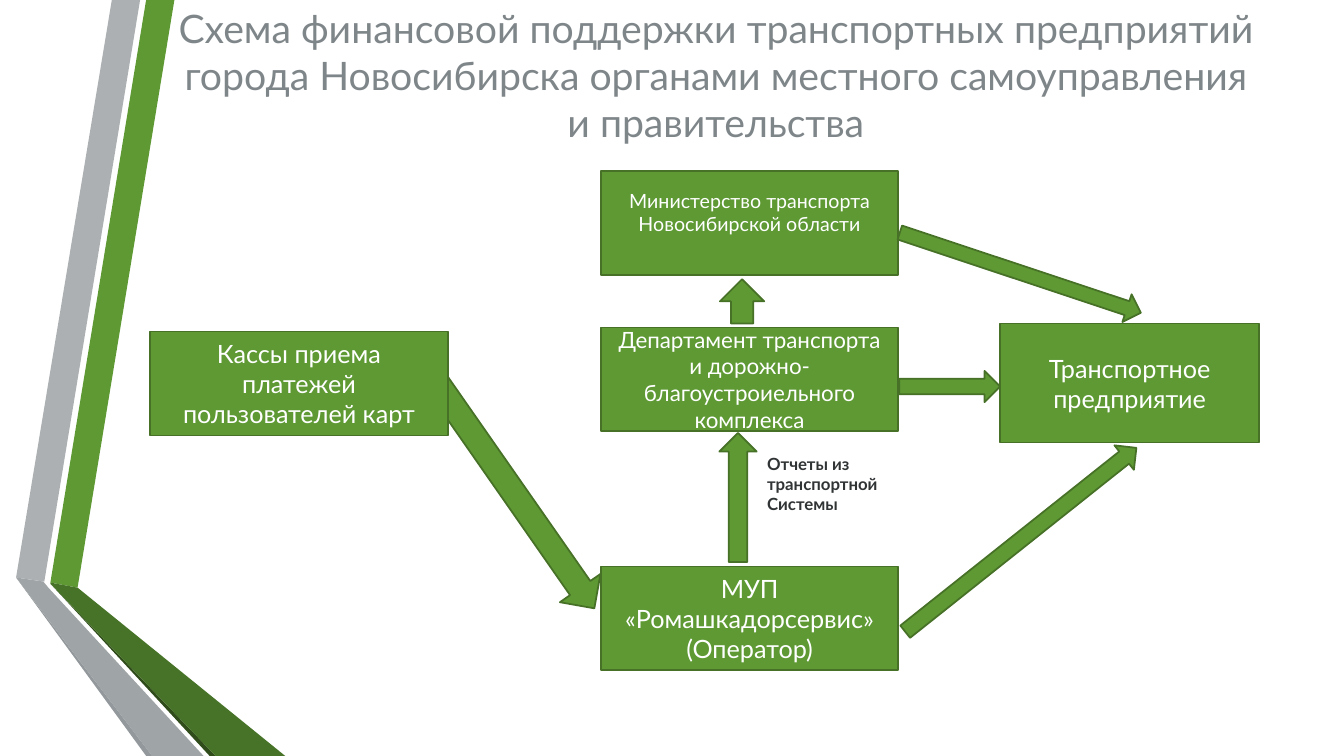
from pptx import Presentation
from pptx.dml.color import RGBColor
from pptx.enum.shapes import MSO_SHAPE
from pptx.enum.text import MSO_ANCHOR, PP_ALIGN
from pptx.util import Inches, Pt

RECT, ARROW = MSO_SHAPE.RECTANGLE, MSO_SHAPE.RIGHT_ARROW
TOP, MIDDLE = MSO_ANCHOR.TOP, MSO_ANCHOR.MIDDLE
LEFT, CENTER = PP_ALIGN.LEFT, PP_ALIGN.CENTER

COLORS = {
    "green": "5E9934", "outline": "467126", "dark_green": "467327",
    "deep_green": "2F4C1A", "silver": "ACB0B2", "gray": "9FA4A6",
    "dark_gray": "92989B", "title": "7F8689", "note": "313435", "white": "FFFFFF",
}

RIBBONS = [
    ("green", [(0.5, 5.78), (0.77, 5.83), (1.73, 0), (1.45, 0)]),
    ("silver", [(1.39, 0), (1.11, 0), (0.16, 5.73), (0.44, 5.77)]),
    ("dark_gray", [(0.16, 5.73), (1.45, 7.5), (1.51, 7.5)]),
    ("deep_green", [(0.5, 5.79), (2.08, 7.5), (2.14, 7.5)]),
    ("dark_green", [(0.5, 5.79), (2.14, 7.5), (2.83, 7.5), (0.77, 5.83), (0.5, 5.78)]),
    ("gray", [(2.02, 7.5), (0.48, 5.83), (0.43, 5.77), (0.16, 5.73), (1.51, 7.5)]),
]

BOX_SIZE = (2.95, 1.03)
MIDDLE_X = 5.96
BOXES = [
    ("Транспортное предприятие", (9.92, 3.21, 2.57, 1.18), 18, 0.05),
    ("МУП «Ромашкадорсервис» (Оператор)", (MIDDLE_X, 5.62, *BOX_SIZE), 18, 0.05),
    ("Кассы приема платежей пользователей карт", (1.49, 3.29, *BOX_SIZE), 18, 0.05),
    ("Департамент транспорта и дорожно-благоустроиельного комплекса",
     (MIDDLE_X, 3.25, *BOX_SIZE), 16, 0.05),
    ("Министерство транспорта Новосибирской области",
     (MIDDLE_X, 1.7, *BOX_SIZE), 14, 0.27),
]

PAYMENTS_ARROW = ((3.71, 4.65, 2.78, 0.49), 55.1)
ARROWS = [
    ((8.92, 3.68, 1, 0.31), 0),
    ((8.66, 5.2, 2.93, 0.31), 321.5),
    ((8.86, 2.56, 2.52, 0.29), 18.4),
    ((6.68, 4.75, 1.28, 0.37), 270),
    ((7.14, 2.77, 0.44, 0.44), 270),
]


def rgb(name):
    """Return the named colour."""
    return RGBColor.from_string(COLORS[name])


def paint(sp, fill, line=None):
    """Give a shape its fill and outline, without a shadow."""
    sp.shadow.inherit = False
    sp.fill.solid()
    sp.fill.fore_color.rgb = rgb(fill)
    if line:
        sp.line.color.rgb = rgb(line)
        sp.line.width = Pt(1.25)
    else:
        sp.line.fill.background()


def write(sp, text, color, size, bold=False, align=CENTER, anchor=MIDDLE):
    """Write one wrapped paragraph into a shape."""
    tf = sp.text_frame
    tf.word_wrap = True
    tf.vertical_anchor = anchor
    p = tf.paragraphs[0]
    p.alignment = align
    r = p.add_run()
    r.text = text
    for key, value in {"name": "Lato", "size": Pt(size), "bold": bold}.items():
        setattr(r.font, key, value)
    r.font.color.rgb = rgb(color)


def add_ribbon(s, color, points):
    """Draw one closed facet of the side ribbon."""
    start, *rest = [(Inches(x), Inches(y)) for x, y in points]
    builder = s.shapes.build_freeform(*start)
    builder.add_line_segments(rest, close=True)
    paint(builder.convert_to_shape(), color)


def add_green(s, kind, at):
    """Add an outlined green preset shape."""
    sp = s.shapes.add_shape(kind, *map(Inches, at))
    paint(sp, "green", "outline")
    return sp


def add_box(s, text, at, size, bottom):
    """Add a labelled participant box."""
    sp = add_green(s, RECT, at)
    sp.text_frame.margin_bottom = Inches(bottom)
    write(sp, text, "white", size)


def add_arrow(s, at, angle):
    """Add a block arrow turned by an angle."""
    add_green(s, ARROW, at).rotation = angle


def add_text(s, text, at, *style, **options):
    """Add a text box."""
    write(s.shapes.add_textbox(*map(Inches, at)), text, *style, **options)


def main():
    """Build the slide and save it."""
    prs = Presentation()
    prs.slide_width, prs.slide_height = Inches(13.33), Inches(7.5)
    s = prs.slides.add_slide(prs.slide_layouts[6])
    for color, points in RIBBONS:
        add_ribbon(s, color, points)
    add_arrow(s, *PAYMENTS_ARROW)
    add_text(s, "Схема финансовой поддержки транспортных предприятий города "
             "Новосибирска органами местного самоуправления и правительства",
             (1.62, -0.22, 10.96, 1.92), "title", 28)
    for box in BOXES:
        add_box(s, *box)
    for arrow in ARROWS:
        add_arrow(s, *arrow)
    add_text(s, "Отчеты из транспортной Системы", (7.51, 4.45, 1.5, 0.71),
             "note", 12, bold=True, align=LEFT, anchor=TOP)
    prs.save("out.pptx")


if __name__ == "__main__":
    main()
